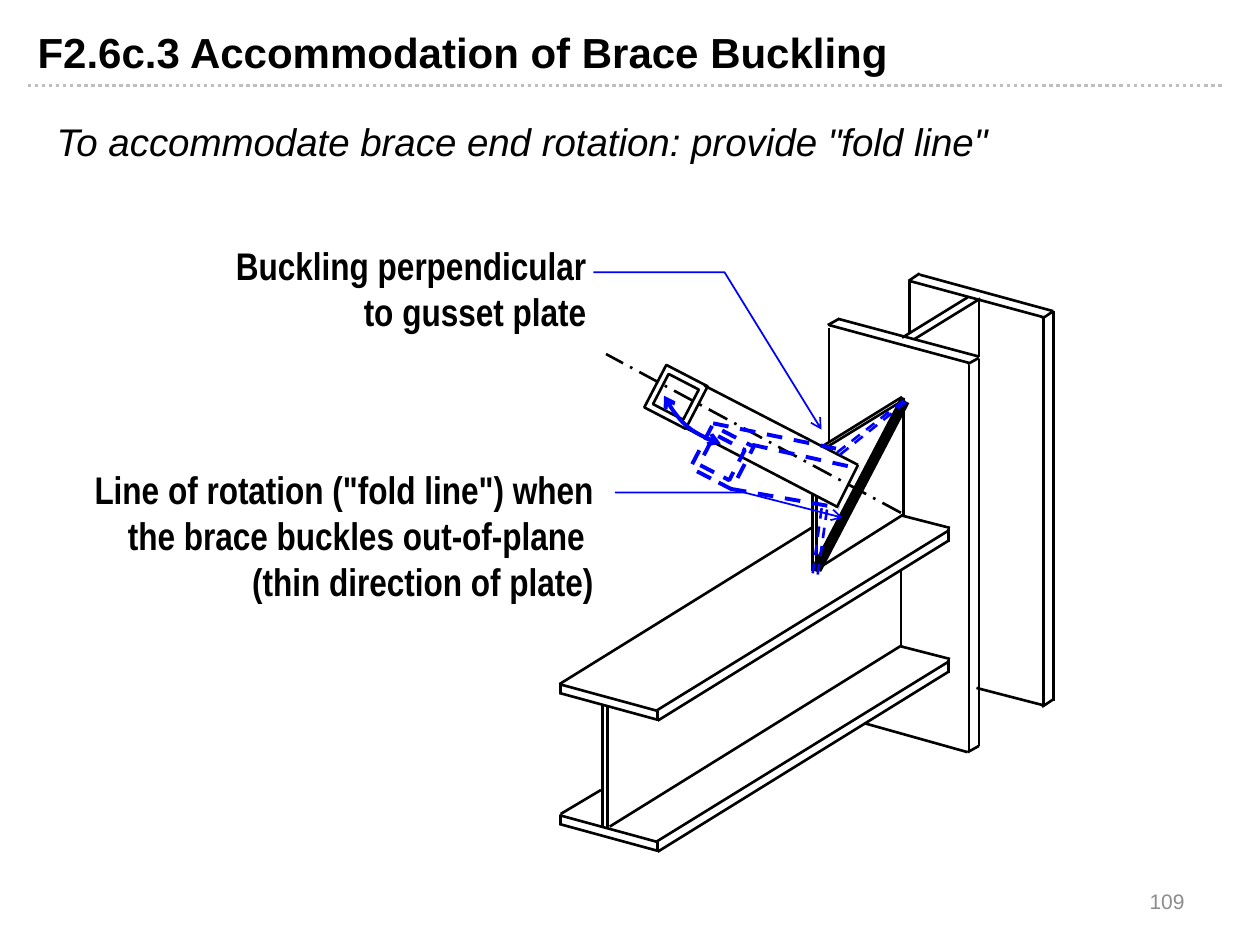
from lxml.etree import SubElement
from pptx import Presentation
from pptx.dml.color import RGBColor
from pptx.enum.dml import MSO_LINE
from pptx.enum.shapes import MSO_CONNECTOR, MSO_SHAPE
from pptx.enum.text import MSO_ANCHOR, PP_ALIGN
from pptx.oxml.ns import qn
from pptx.util import Cm, Pt

BLACK, BLUE, GREY, RULE_GREY = "000000", "0000FF", "8C8C8C", "BFBFBF"

# Drawing coordinates are in inches; lines are (x1, y1, x2, y2).
FLANGE_DROP = 1.04  # from the beam's top flange to its bottom flange
BEAM_FLANGE = [
    (7.54, 4.19, 7.15, 4.09), (7.53, 4.21, 5.21, 5.64),
    (5.21, 5.64, 4.44, 5.43), (7.53, 4.29, 5.22, 5.72),
    (5.21, 5.71, 4.44, 5.5), (5.22, 5.64, 5.22, 5.72),
    (4.45, 5.43, 4.45, 5.51), (7.53, 4.2, 7.53, 4.3),
]
BEAM_WEB = [
    (6.44, 4.19, 4.44, 5.43), (7.16, 4.09, 6.48, 4.52),
    (4.77, 6.27, 4.45, 6.46), (7.16, 5.12, 4.84, 6.56),
    (4.78, 5.6, 4.78, 6.56), (4.82, 5.6, 4.82, 6.56),
    (7.15, 5.13, 7.15, 4.52),
]
COLUMN_FRONT = [
    (7.69, 2.9, 7.69, 5.97), (6.58, 2.6, 6.58, 3.51),
    (7.68, 5.97, 6.86, 5.74), (7.69, 2.88, 6.58, 2.58),
    (7.77, 2.83, 6.65, 2.53), (6.66, 2.53, 6.57, 2.58),
    (7.77, 2.84, 7.68, 2.89), (7.77, 2.85, 7.77, 5.92),
    (7.77, 5.92, 7.68, 5.97),
]
COLUMN_BACK = [
    (8.36, 2.47, 8.36, 5.56), (8.36, 2.47, 7.3, 2.18),
    (7.3, 2.17, 7.21, 2.23), (8.29, 2.52, 7.22, 2.23),
    (8.36, 2.47, 8.27, 2.53), (8.28, 2.52, 8.28, 5.6),
    (7.22, 2.23, 7.22, 2.64), (8.36, 5.55, 8.27, 5.61),
    (8.29, 5.6, 7.75, 5.46),
]
COLUMN_WEB = [
    (7.78, 2.37, 7.26, 2.69), (7.68, 2.36, 7.16, 2.68),
    (7.77, 2.39, 7.77, 2.83),
]
GUSSET = [
    (6.45, 4.53, 6.45, 3.93), (6.48, 4.53, 6.48, 3.93),
    (7.16, 3.15, 6.53, 3.54), (7.18, 3.17, 6.56, 3.55),
    (6.49, 4.53, 6.46, 4.52), (6.47, 4.52, 6.44, 4.51),
    (7.18, 3.17, 7.15, 3.16), (7.17, 4.1, 7.17, 3.19),
]
BRACE = [
    (6.81, 3.69, 6.64, 4.03), (6.64, 4.02, 5.45, 3.4),
    (6.81, 3.69, 5.59, 3.06),
]
BENT_GUSSET = [
    (6.45, 4.55, 6.53, 3.97), (6.49, 4.56, 6.57, 4),
    (7.17, 3.18, 6.62, 3.61), (7.19, 3.19, 6.64, 3.63),
]
BENT_BRACE = [
    (5.97, 3.53, 6.82, 3.72), (5.8, 3.88, 6.66, 4.03),
    (5.66, 3.36, 6.68, 3.57),
]

OUTLINE = {"color": BLACK, "width": 1.5}
BENT_THIN = {"color": BLUE, "width": 1.5, "dash": MSO_LINE.DASH}
BENT_THICK = {"color": BLUE, "width": 2.25, "dash": MSO_LINE.DASH}
LEADER = {"color": BLUE, "width": 1, "arrows": ["tailEnd"]}
SWING = {"color": BLUE, "width": 2.25, "arrows": ["headEnd", "tailEnd"]}

beam_bottom = [(x1, y1 + FLANGE_DROP, x2, y2 + FLANGE_DROP)
               for x1, y1, x2, y2 in BEAM_FLANGE]
LINE_GROUPS = [
    ([(0.22, 0.68, 9.72, 0.68)],
     {"color": RULE_GREY, "width": 2, "dash": MSO_LINE.ROUND_DOT}),
    ([(7.18, 3.18, 6.48, 4.52)], {"color": BLACK, "width": 6}),  # fold line
    ([(7.15, 4.07, 4.81, 2.81)],  # brace axis
     {"color": BLACK, "width": 1.5, "dash": MSO_LINE.LONG_DASH_DOT}),
    (BEAM_FLANGE + beam_bottom + BEAM_WEB, OUTLINE),
    (COLUMN_FRONT + COLUMN_BACK + COLUMN_WEB, OUTLINE),
    (GUSSET + BRACE, OUTLINE),
    (BENT_GUSSET, BENT_THIN),
    (BENT_BRACE, BENT_THICK),
]

BRACE_ANGLE = 27.4
TUBE_WALLS = [(0.37, 0.38), (0.27, 0.27)]  # outer and inner size
TUBE_ENDS = [((5.365, 3.15), OUTLINE), ((5.73, 3.63), BENT_THICK)]

LEADERS = [
    [(4.71, 2.16), (5.75, 2.16), (6.52, 3.41)],
    [(4.88, 3.91), (5.91, 3.91), (6.69, 4.11)],
]
SWING_CURVE = [(5.72, 3.52), (5.52, 3.46), (5.36, 3.32), (5.27, 3.14)]

LABEL = {"name": "Arial Narrow", "size": Pt(22), "bold": True}
TEXTS = [
    ("F2.6c.3 Accommodation of Brace Buckling", (0.2, 0.16, 8.98, 0.44),
     {"name": "Arial", "size": Pt(24), "bold": True}, BLACK,
     PP_ALIGN.LEFT, MSO_ANCHOR.TOP),
    ('To accommodate brace end rotation: provide "fold line"',
     (0.35, 0.89, 8.98, 0.49),
     {"name": "Arial", "size": Pt(22), "italic": True}, BLACK,
     PP_ALIGN.LEFT, MSO_ANCHOR.TOP),
    ("Buckling perpendicular to gusset plate", (1.66, 1.87, 3.09, 0.84),
     LABEL, BLACK, PP_ALIGN.RIGHT, MSO_ANCHOR.TOP),
    ('Line of rotation ("fold line") when the brace buckles out-of-plane \v'
     "(thin direction of plate)", (0.35, 3.65, 4.46, 1.21),
     LABEL, BLACK, PP_ALIGN.RIGHT, MSO_ANCHOR.TOP),
    ("109", (7.17, 6.95, 2.33, 0.4), {"name": "Arial", "size": Pt(12)}, GREY,
     PP_ALIGN.RIGHT, MSO_ANCHOR.MIDDLE),
]


def rgb(code):
    return RGBColor.from_string(code)


def lengths(values):
    """Turn drawing inches into slide lengths."""
    return [Cm(value * 2.54) for value in values]


def style_line(line, color, width, dash=None, arrows=()):
    line.color.rgb = rgb(color)
    line.width = Pt(width)
    if dash is not None:
        line.dash_style = dash
    for end in arrows:
        SubElement(line._get_or_add_ln(), qn(f"a:{end}"), type="arrow")


def add_line(shapes, ends, style):
    line = shapes.add_connector(MSO_CONNECTOR.STRAIGHT, *lengths(ends))
    style_line(line.line, **style)
    SubElement(line._element.spPr, qn("a:effectLst"))


def add_path(shapes, points, style):
    start, *rest = [lengths(point) for point in points]
    builder = shapes.build_freeform(*start)
    builder.add_line_segments(rest, close=False)
    path = builder.convert_to_shape()
    style_outline(path, style)
    return path


def style_outline(shape, style):
    shape.shadow.inherit = False
    shape.fill.background()
    style_line(shape.line, **style)


def bend(shape):
    """Make one cubic curve of a path's three segments."""
    segments = list(shape._element.iter(qn("a:lnTo")))
    curve = SubElement(segments[0].getparent(), qn("a:cubicBezTo"))
    for segment in segments:
        curve.append(segment[0])
        segment.getparent().remove(segment)


def add_text(shapes, text, place, font, color, align, anchor):
    frame = shapes.add_textbox(*lengths(place)).text_frame
    frame.word_wrap = True
    frame.vertical_anchor = anchor
    paragraph = frame.paragraphs[0]
    paragraph.text = text
    paragraph.alignment = align
    for key, value in font.items():
        setattr(paragraph.font, key, value)
    paragraph.font.color.rgb = rgb(color)


def main():
    deck = Presentation()
    deck.slide_width, deck.slide_height = Cm(25.4), Cm(19.05)
    shapes = deck.slides.add_slide(deck.slide_layouts[6]).shapes

    for lines, style in LINE_GROUPS:
        for ends in lines:
            add_line(shapes, ends, style)
    for (x, y), style in TUBE_ENDS:
        for w, h in TUBE_WALLS:
            wall = shapes.add_shape(MSO_SHAPE.RECTANGLE,
                                    *lengths((x - w / 2, y - h / 2, w, h)))
            wall.rotation = BRACE_ANGLE
            style_outline(wall, style)
    for points in LEADERS:
        add_path(shapes, points, LEADER)
    bend(add_path(shapes, SWING_CURVE, SWING))
    for entry in TEXTS:
        add_text(shapes, *entry)
    deck.save("out.pptx")


if __name__ == "__main__":
    main()
